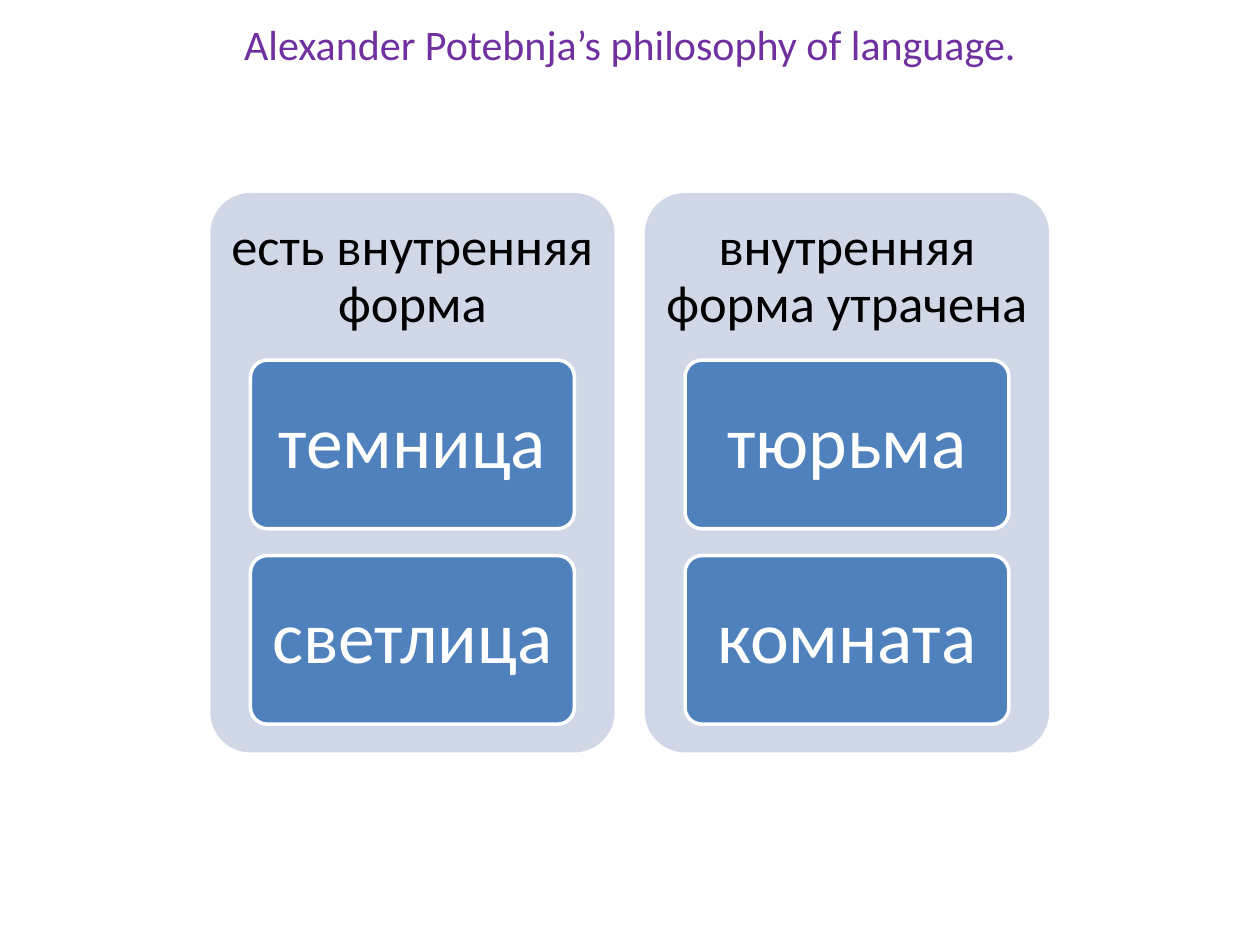
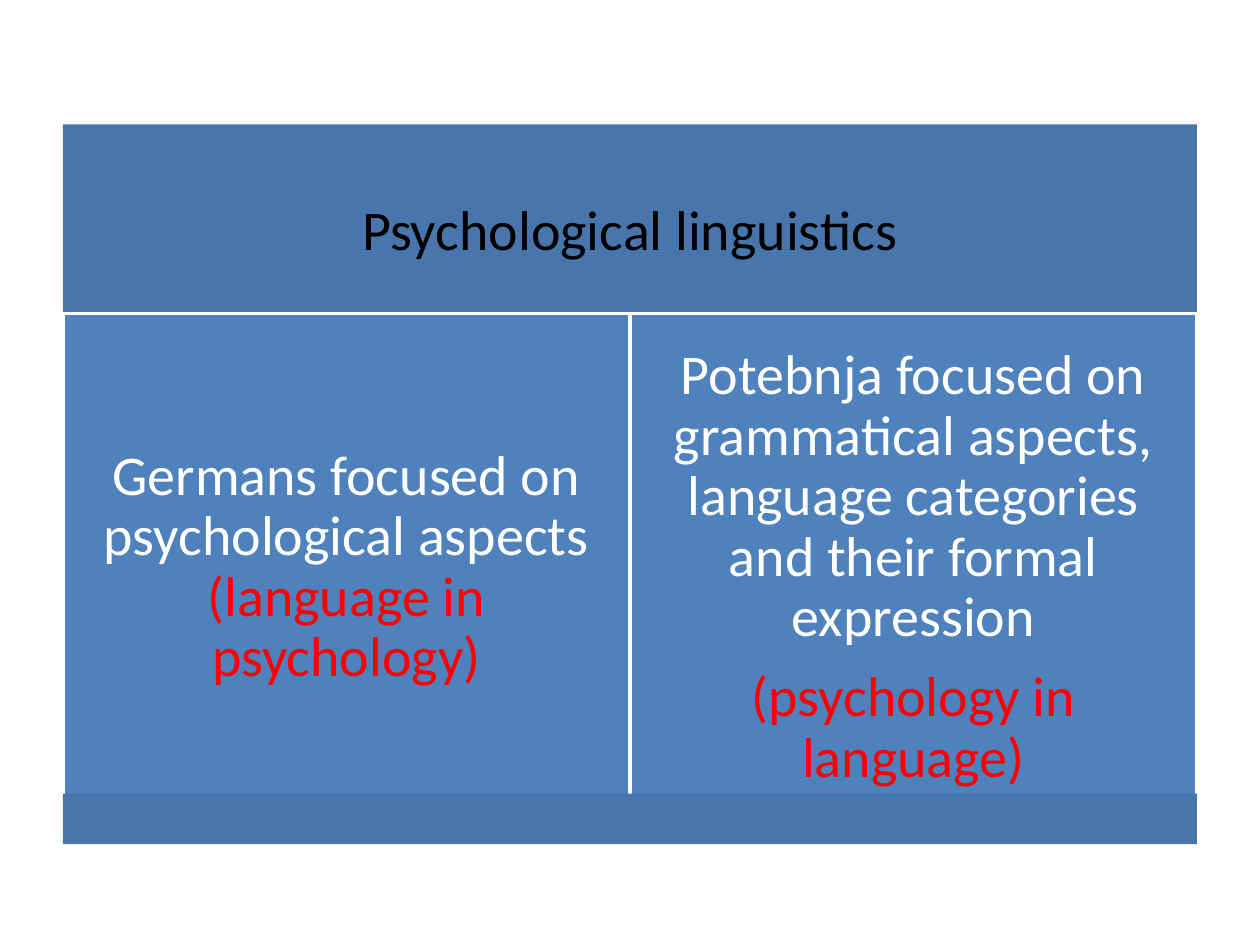
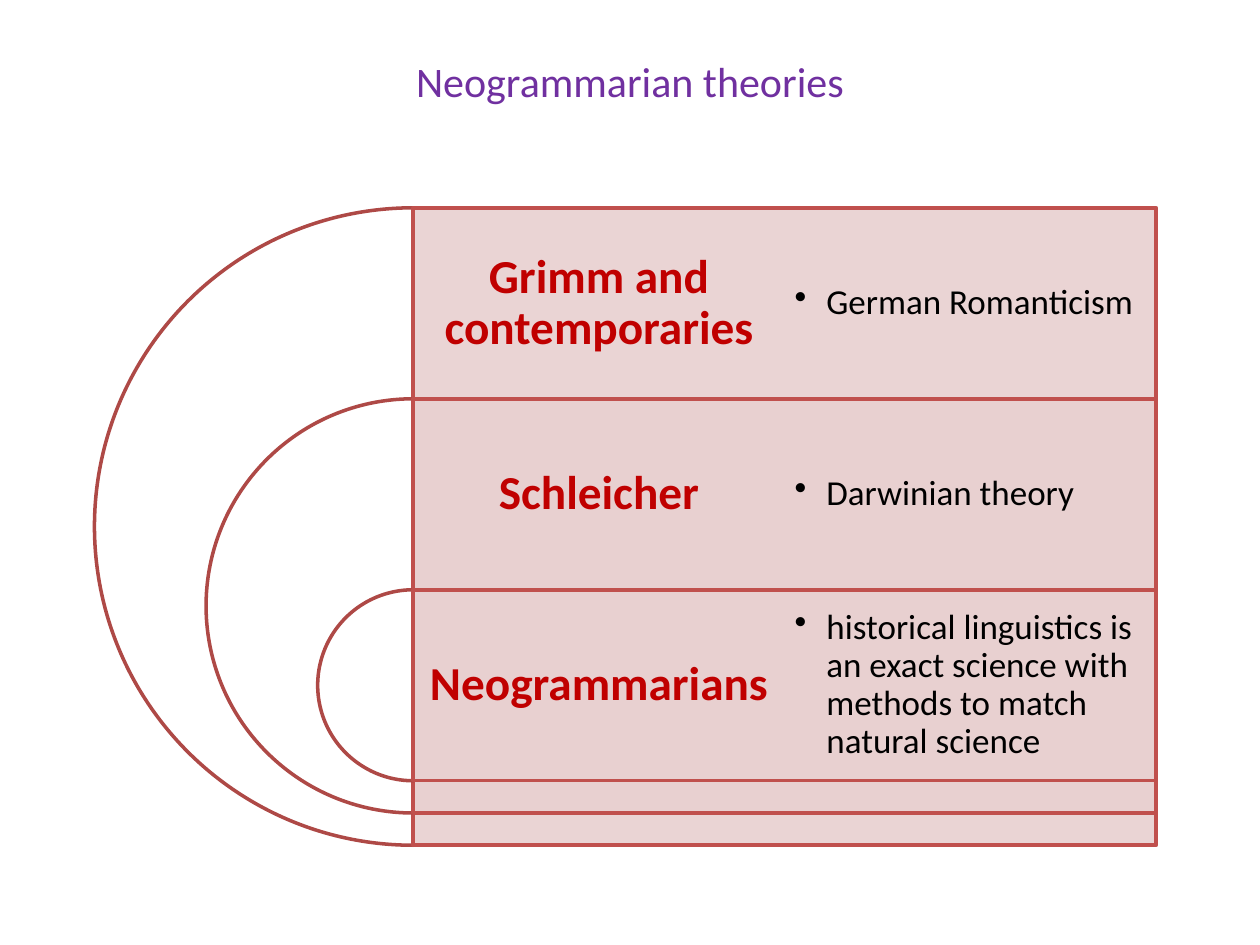
from lxml.etree import SubElement
from pptx import Presentation
from pptx.dml.color import RGBColor
from pptx.enum.shapes import MSO_SHAPE as Shape
from pptx.enum.text import MSO_ANCHOR as Anchor, MSO_AUTO_SIZE as Fit, PP_ALIGN as Align
from pptx.oxml.ns import qn
from pptx.util import Cm, Pt

FONT = "Calibri"
BLACK = RGBColor(0x00, 0x00, 0x00)
WHITE = RGBColor(0xFF, 0xFF, 0xFF)
RED = RGBColor(0xFF, 0x00, 0x00)
PURPLE = RGBColor(0x70, 0x30, 0xA0)
BLUE = RGBColor(0x4F, 0x81, 0xBD)
STEEL = RGBColor(0x48, 0x75, 0xAC)
PALE = RGBColor(0xD0, 0xD8, 0xE8)
CRIMSON = RGBColor(0xC0, 0x00, 0x00)
ROSE = RGBColor(0xE8, 0xD0, 0xD0)
BRICK = RGBColor(0xC0, 0x50, 0x4D)
RUST = RGBColor(0xAE, 0x49, 0x46)


# Shared elements
def style(run, size, color, bold=False):
    font = run.font
    font.name, font.size, font.bold = FONT, Pt(size), bold
    font.color.rgb = color


def add_title(slide, text, top):
    title = slide.shapes.title
    title.left, title.top, title.width, title.height = Cm(1.27), Cm(top), Cm(22.86), Cm(1.75)
    frame = title.text_frame
    frame.text = text
    frame.auto_size = Fit.NONE
    frame.vertical_anchor = Anchor.MIDDLE
    frame.paragraphs[0].alignment = Align.CENTER
    style(frame.paragraphs[0].runs[0], 24, PURPLE)


def add_shape(slide, kind, box, fill, line=None):
    shape = slide.shapes.add_shape(kind, *map(Cm, box))
    shape.shadow.inherit = False
    shape.fill.solid()
    shape.fill.fore_color.rgb = fill
    if line is None:
        shape.line.fill.background()
    else:
        shape.line.color.rgb = line
        shape.line.width = Pt(2)
    return shape


def add_round(slide, box, fill, line=None):
    shape = add_shape(slide, Shape.ROUNDED_RECTANGLE, box, fill, line)
    shape.adjustments[0] = 0.1
    return shape


def write(shape, paras, size, inset, bold=False, align=Align.CENTER):
    """Fill a shape with paragraphs, each a list of (text, color) runs."""
    frame = shape.text_frame
    frame.word_wrap = True
    frame.vertical_anchor = Anchor.MIDDLE
    frame.margin_left = frame.margin_right = Cm(inset)
    frame.margin_top = frame.margin_bottom = Cm(inset)
    for i, parts in enumerate(paras):
        para = frame.add_paragraph() if i else frame.paragraphs[0]
        para.alignment = align
        para.line_spacing = 0.9
        if i:
            para.space_before = Pt(0.35 * size)
        for text, color in parts:
            run = para.add_run()
            run.text = text
            style(run, size, color, bold)


def add_text(slide, box, text, size, color, inset, **look):
    area = slide.shapes.add_textbox(*map(Cm, box))
    write(area, [[(text, color)]], size, inset, **look)
    return area


def add_bullet(para):
    para.level = 1
    props = para._p.get_or_add_pPr()
    props.set("marL", str(Cm(0.64)))
    props.set("indent", str(-Cm(0.64)))
    SubElement(props, qn("a:buChar")).set("char", "•")


def set_alpha(shape, share):
    color = shape.fill._xPr.find(qn("a:solidFill"))[0]
    SubElement(color, qn("a:alpha")).set("val", str(share * 1000))


# Slide 1: two panels of words
def add_panel(slide, left, head, words):
    top, width = 3.89, 8.15
    add_round(slide, (left, top, width, 11.28), PALE)
    add_text(slide, (left, top, width, 3.38), head, 30, BLACK, 0.3)
    for i, word in enumerate(words):
        card = add_round(slide, (left + 0.81, 7.26 + 3.94 * i, 6.53, 3.4), BLUE, WHITE)
        write(card, [[(word, WHITE)]], 42, 0.25)


def make_words(slide):
    add_title(slide, "Alexander Potebnja’s philosophy of language.", 0)
    panels = [
        ("есть внутренняя форма", ["темница", "светлица"]),
        ("внутренняя форма утрачена", ["тюрьма", "комната"]),
    ]
    for i, (head, words) in enumerate(panels):
        add_panel(slide, 4.24 + 8.76 * i, head, words)


# Slide 2: header band, two cells, footer band
def make_focus(slide):
    left, width = 1.27, 22.86
    band = add_shape(slide, Shape.RECTANGLE, (left, 2.51, width, 4.34), STEEL)
    write(band, [[("Psychological linguistics", BLACK)]], 32, 0.33)
    cells = [
        [[("Germans focused on psychological aspects ", WHITE),
          ("(language in psychology)", RED)]],
        [[("Potebnja focused on grammatical aspects, language categories "
           "and their formal expression", WHITE)],
         [("(psychology in language)", RED)]],
    ]
    half = width / 2
    for i, paras in enumerate(cells):
        cell = add_shape(slide, Shape.RECTANGLE, (left + half * i, 6.32, half, 10.25), BLUE, WHITE)
        write(cell, paras, 32, 0.33)
    add_shape(slide, Shape.RECTANGLE, (left, 16, width, 1.02), STEEL)


# Slide 3: nested half rings, each with a row
def add_layer(slide, top, size, row, head, note):
    mid, width = 8.33, 14.98
    half = width / 2
    ring = add_shape(slide, Shape.PIE, (mid - size / 2, top, size, size), WHITE, RUST)
    ring.adjustments[0], ring.adjustments[1] = 54, 162
    bar = add_shape(slide, Shape.RECTANGLE, (mid, top, width, size), ROSE, BRICK)
    set_alpha(bar, 90)
    add_text(slide, (mid, top, half, row), head, 27, CRIMSON, 0.28, bold=True)
    area = add_text(slide, (mid + half, top, half, row), note, 20, BLACK, 0.2, align=Align.LEFT)
    add_bullet(area.text_frame.paragraphs[0])


def make_layers(slide):
    add_title(slide, "Neogrammarian theories", 0.76)
    layers = [
        ("Grimm and contemporaries", "German Romanticism"),
        ("Schleicher", "Darwinian theory"),
        ("Neogrammarians",
         "historical linguistics is an exact science with methods to match natural science"),
    ]
    row, step = 3.85, 4.5
    for i, (head, note) in enumerate(layers):
        size = row + step * (len(layers) - 1 - i)
        add_layer(slide, 4.19 + row * i, size, row, head, note)


def main():
    deck = Presentation()
    deck.slide_width, deck.slide_height = Cm(25.4), Cm(19.05)
    titled, blank = deck.slide_layouts[5], deck.slide_layouts[6]
    for layout, make in ((titled, make_words), (blank, make_focus), (titled, make_layers)):
        make(deck.slides.add_slide(layout))
    deck.save("out.pptx")


if __name__ == "__main__":
    main()
